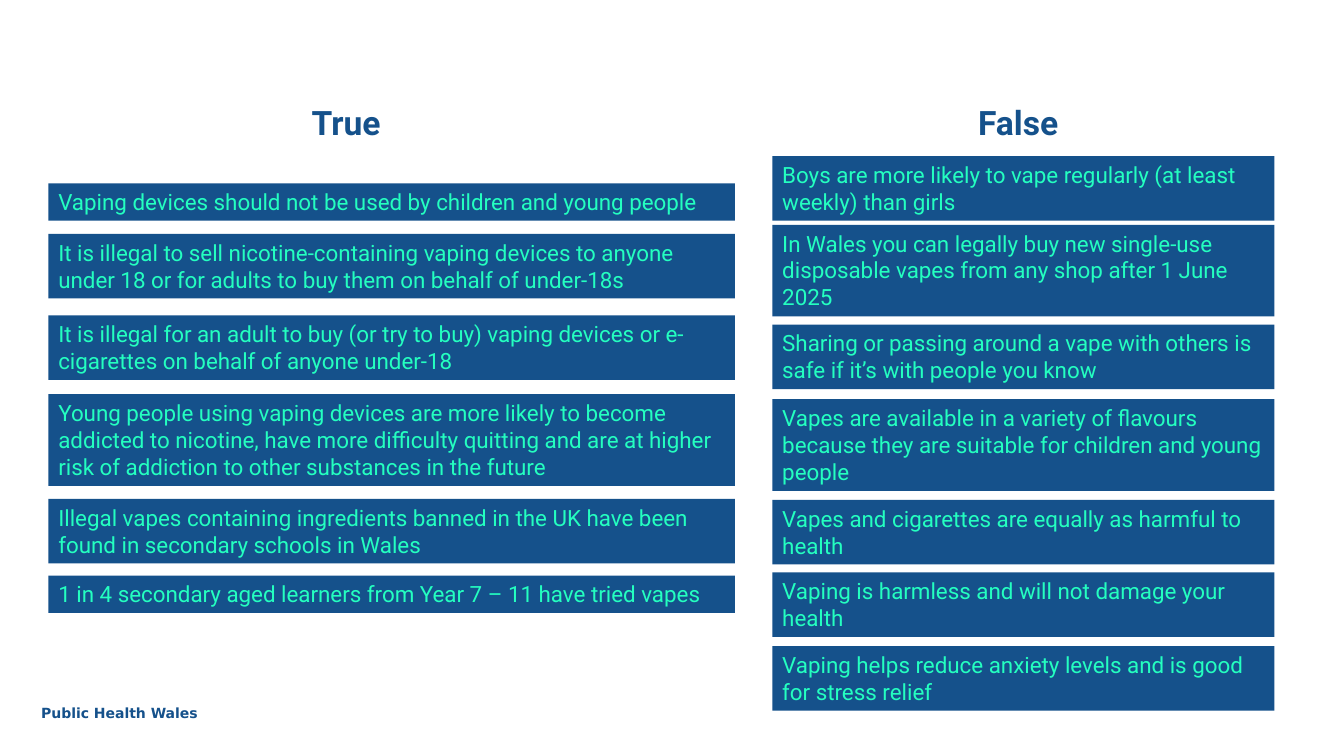
from pptx import Presentation
from pptx.dml.color import RGBColor
from pptx.enum.shapes import MSO_SHAPE
from pptx.enum.text import MSO_ANCHOR, MSO_AUTO_SIZE, PP_ALIGN
from pptx.util import Inches, Pt

RECTANGLE = MSO_SHAPE.RECTANGLE
TOP, BOTTOM = MSO_ANCHOR.TOP, MSO_ANCHOR.BOTTOM
FIT_SHAPE, NO_FIT = MSO_AUTO_SIZE.SHAPE_TO_FIT_TEXT, MSO_AUTO_SIZE.NONE
LEFT = PP_ALIGN.LEFT

COLORS = {"navy": "15518B", "mint": "24FFC0"}
FOOTER = "Public Health Wales"
LINE_HEIGHT, PADDING = 0.27, 0.1

COLUMNS = [
    {
        "heading": "True", "placeholder": 1, "heading_box": (2.99, 0.74, 1.78, 0.72),
        "left": 0.48, "width": 6.81,
        "statements": [
            (1.82, 1, "Vaping devices should not be used by children and young people"),
            (2.32, 2, "It is illegal to sell nicotine-containing vaping devices to anyone "
                      "under 18 or for adults to buy them on behalf of under-18s"),
            (3.13, 2, "It is illegal for an adult to buy (or try to buy) vaping devices or "
                      "e-cigarettes on behalf of anyone under-18"),
            (3.91, 3, "Young people using vaping devices are more likely to become addicted "
                      "to nicotine, have more difficulty quitting and are at higher risk of "
                      "addiction to other substances in the future"),
            (4.95, 2, "Illegal vapes containing ingredients banned in the UK have been found "
                      "in secondary schools in Wales"),
            (5.71, 1, "1 in 4 secondary aged learners from Year 7 – 11 have tried vapes"),
        ],
    },
    {
        "heading": "False", "placeholder": 3, "heading_box": (9.6, 0.97, 1.46, 0.49),
        "left": 7.66, "width": 4.98,
        "statements": [
            (1.55, 2, "Boys are more likely to vape regularly (at least weekly) than girls"),
            (2.23, 3, "In Wales you can legally buy new single‑use disposable vapes from any "
                      "shop after 1 June 2025"),
            (3.22, 2, "Sharing or passing around a vape with others is safe if it’s with "
                      "people you know"),
            (3.96, 3, "Vapes are available in a variety of flavours because they are suitable "
                      "for children and young people"),
            (4.96, 2, "Vapes and cigarettes are equally as harmful to health"),
            (5.68, 2, "Vaping is harmless and will not damage your health"),
            (6.41, 2, "Vaping helps reduce anxiety levels and is good for stress relief"),
        ],
    },
]


def write(shape, text, size, color, font="Roboto", bold=False, anchor=TOP, fit=FIT_SHAPE):
    frame = shape.text_frame
    frame.word_wrap = True
    frame.auto_size = fit
    frame.vertical_anchor = anchor
    paragraph = frame.paragraphs[0]
    paragraph.alignment = LEFT
    paragraph.space_before = Pt(0)
    run = paragraph.add_run()
    run.text = text
    run.font.size = Pt(size)
    run.font.name = font
    run.font.bold = bold
    run.font.color.rgb = RGBColor.from_string(COLORS[color])


def add_heading(slide, column):
    heading = slide.placeholders[column["placeholder"]]
    heading.left, heading.top, heading.width, heading.height = map(Inches, column["heading_box"])
    write(heading, column["heading"], 24, "navy", bold=True, anchor=BOTTOM, fit=NO_FIT)


def add_statement(slide, column, top, lines, text):
    box = (column["left"], top, column["width"], PADDING + lines * LINE_HEIGHT)
    shape = slide.shapes.add_shape(RECTANGLE, *map(Inches, box))
    shape.shadow.inherit = False
    shape.fill.solid()
    shape.fill.fore_color.rgb = RGBColor.from_string(COLORS["navy"])
    shape.line.fill.background()
    write(shape, text, 16, "mint")


def main():
    presentation = Presentation()
    presentation.slide_width, presentation.slide_height = Inches(13.33), Inches(7.5)
    slide = presentation.slides.add_slide(presentation.slide_layouts.get_by_name("Comparison"))

    footer = slide.shapes.add_textbox(*map(Inches, (0.31, 6.94, 1.81, 0.27)))
    write(footer, FOOTER, 10, "navy", font="DejaVu Sans", bold=True)

    for column in COLUMNS:
        add_heading(slide, column)
        for top, lines, text in column["statements"]:
            add_statement(slide, column, top, lines, text)

    for placeholder in list(slide.placeholders):
        if not placeholder.text_frame.text:
            placeholder.element.getparent().remove(placeholder.element)

    presentation.save("out.pptx")


if __name__ == "__main__":
    main()
